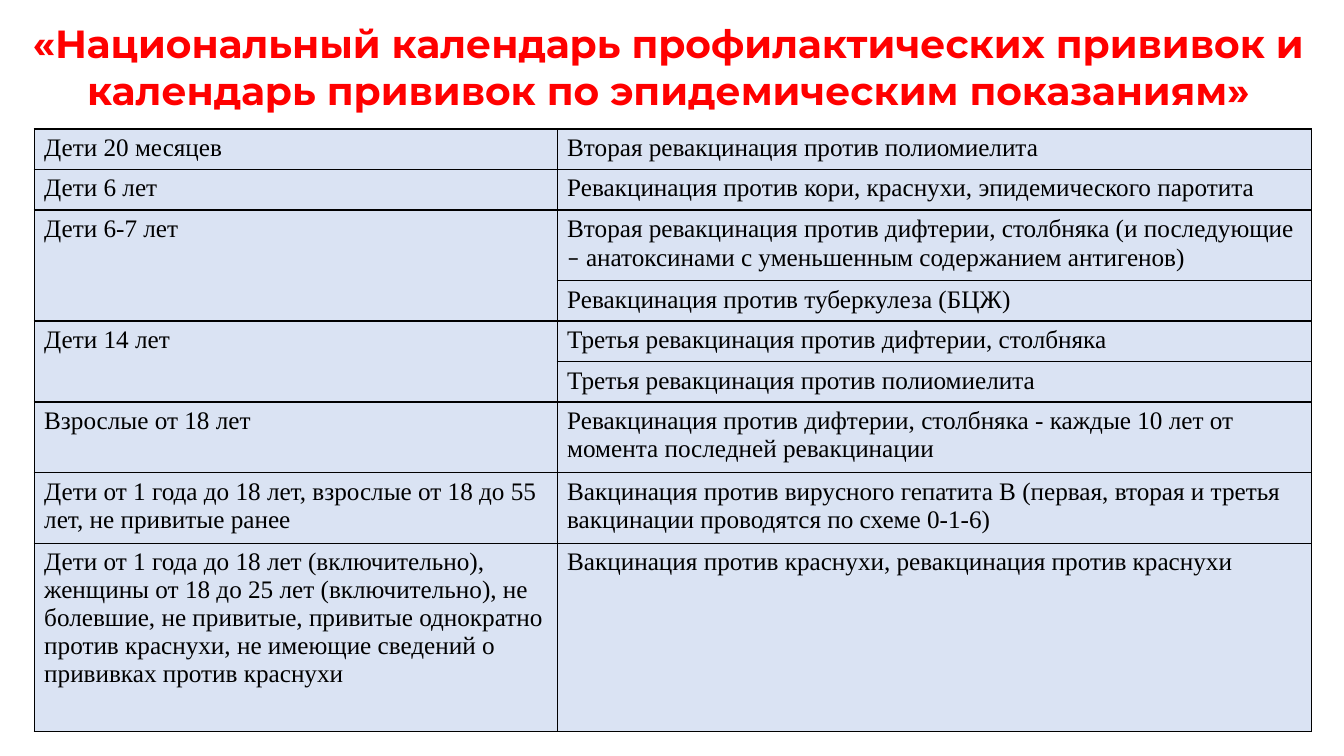
import dataclasses

import lxml.etree
import pptx
import pptx.dml.color
import pptx.enum.text
import pptx.oxml.ns
import pptx.util

Cm = pptx.util.Cm
Pt = pptx.util.Pt

COLOURS = {"title": "FF0000", "text": "000000", "cell": "DAE3F3", "border": "000000"}
BODY_FONT = "Times New Roman"
DASH_FONT = "Calibri"
COLUMN_WIDTHS = (13.18, 19.02)
LINE_HEIGHTS = {1: 1.02, 2: 1.78, 5: 4.75}


@dataclasses.dataclass
class Vaccination:
    text: str
    lines: int = 1


@dataclasses.dataclass
class AgeGroup:
    name: str
    vaccinations: list[Vaccination]


TITLE = ("«Национальный календарь профилактических прививок и "
         "календарь прививок по эпидемическим показаниям»")
AGE_GROUPS = [
    AgeGroup("Дети 20 месяцев", [Vaccination("Вторая ревакцинация против полиомиелита")]),
    AgeGroup("Дети 6 лет", [
        Vaccination("Ревакцинация против кори, краснухи, эпидемического паротита")]),
    AgeGroup("Дети 6-7 лет", [
        Vaccination("Вторая ревакцинация против дифтерии, столбняка (и последующие "
                    "– анатоксинами с уменьшенным содержанием антигенов)", 2),
        Vaccination("Ревакцинация против туберкулеза (БЦЖ)")]),
    AgeGroup("Дети 14 лет", [
        Vaccination("Третья ревакцинация против дифтерии, столбняка"),
        Vaccination("Третья ревакцинация против полиомиелита")]),
    AgeGroup("Взрослые от 18 лет", [
        Vaccination("Ревакцинация против дифтерии, столбняка - каждые 10 лет от "
                    "момента последней ревакцинации", 2)]),
    AgeGroup("Дети от 1 года до 18 лет, взрослые от 18 до 55 лет, не привитые ранее", [
        Vaccination("Вакцинация против вирусного гепатита В (первая, вторая и третья "
                    "вакцинации проводятся по схеме 0-1-6)", 2)]),
    AgeGroup("Дети от 1 года до 18 лет (включительно), женщины от 18 до 25 лет "
             "(включительно), не болевшие, не привитые, привитые однократно против "
             "краснухи, не имеющие сведений о прививках против краснухи", [
                 Vaccination("Вакцинация против краснухи, ревакцинация против краснухи", 5)]),
]


def add_text(paragraph, text: str, *, size: float = 18, font: str = BODY_FONT,
             colour: str = COLOURS["text"], bold: bool = False) -> None:
    run = paragraph.add_run()
    run.text = text
    run.font.size = Pt(size)
    run.font.name = font
    run.font.bold = bold
    run.font.color.rgb = pptx.dml.color.RGBColor.from_string(colour)


def set_borders(cell, colour: str, width: float) -> None:
    properties = cell._tc.get_or_add_tcPr()
    qn = pptx.oxml.ns.qn
    for position, side in enumerate(("lnL", "lnR", "lnT", "lnB")):
        line = lxml.etree.Element(qn(f"a:{side}"), w=str(Pt(width)))
        fill = lxml.etree.SubElement(line, qn("a:solidFill"))
        lxml.etree.SubElement(fill, qn("a:srgbClr"), val=colour)
        properties.insert(position, line)


def style_cell(cell) -> None:
    cell.fill.solid()
    cell.fill.fore_color.rgb = pptx.dml.color.RGBColor.from_string(COLOURS["cell"])
    set_borders(cell, COLOURS["border"], 1)


def fill_cell(cell, text: str) -> None:
    # The dash has its own typeface
    before, dash, after = text.partition("–")
    paragraph = cell.text_frame.paragraphs[0]
    for part, font in ((before, BODY_FONT), (dash, DASH_FONT), (after, BODY_FONT)):
        if part:
            add_text(paragraph, part, font=font)


def add_title(slide) -> None:
    title = slide.shapes.title
    title.left, title.top, title.width, title.height = Cm(0.38), Cm(0.36), Cm(32.92), Cm(2.64)
    frame = title.text_frame
    frame.word_wrap = True
    frame.auto_size = pptx.enum.text.MSO_AUTO_SIZE.SHAPE_TO_FIT_TEXT
    frame.vertical_anchor = pptx.enum.text.MSO_ANCHOR.TOP
    paragraph = frame.paragraphs[0]
    paragraph.alignment = pptx.enum.text.PP_ALIGN.CENTER
    add_text(paragraph, TITLE, size=28, font="Montserrat", colour=COLOURS["title"], bold=True)


def add_calendar(slide, groups: list[AgeGroup]) -> None:
    heights = [LINE_HEIGHTS[item.lines] for group in groups for item in group.vaccinations]
    table = slide.shapes.add_table(
        len(heights), len(COLUMN_WIDTHS), Cm(0.86), Cm(3.25),
        Cm(sum(COLUMN_WIDTHS)), Cm(sum(heights))).table
    table.first_row = table.horz_banding = False
    for column, width in zip(table.columns, COLUMN_WIDTHS):
        column.width = Cm(width)
    for row, height in zip(table.rows, heights):
        row.height = Cm(height)
    for cell in table.iter_cells():
        style_cell(cell)

    # One merged age cell beside each group's vaccinations
    first = 0
    for group in groups:
        last = first + len(group.vaccinations) - 1
        if last > first:
            table.cell(first, 0).merge(table.cell(last, 0))
        fill_cell(table.cell(first, 0), group.name)
        for row, item in enumerate(group.vaccinations, first):
            fill_cell(table.cell(row, 1), item.text)
        first = last + 1


def main() -> None:
    presentation = pptx.Presentation()
    presentation.slide_width, presentation.slide_height = Cm(33.87), Cm(19.05)
    slide = presentation.slides.add_slide(presentation.slide_layouts[5])
    add_title(slide)
    add_calendar(slide, AGE_GROUPS)
    presentation.save("out.pptx")


if __name__ == "__main__":
    main()
